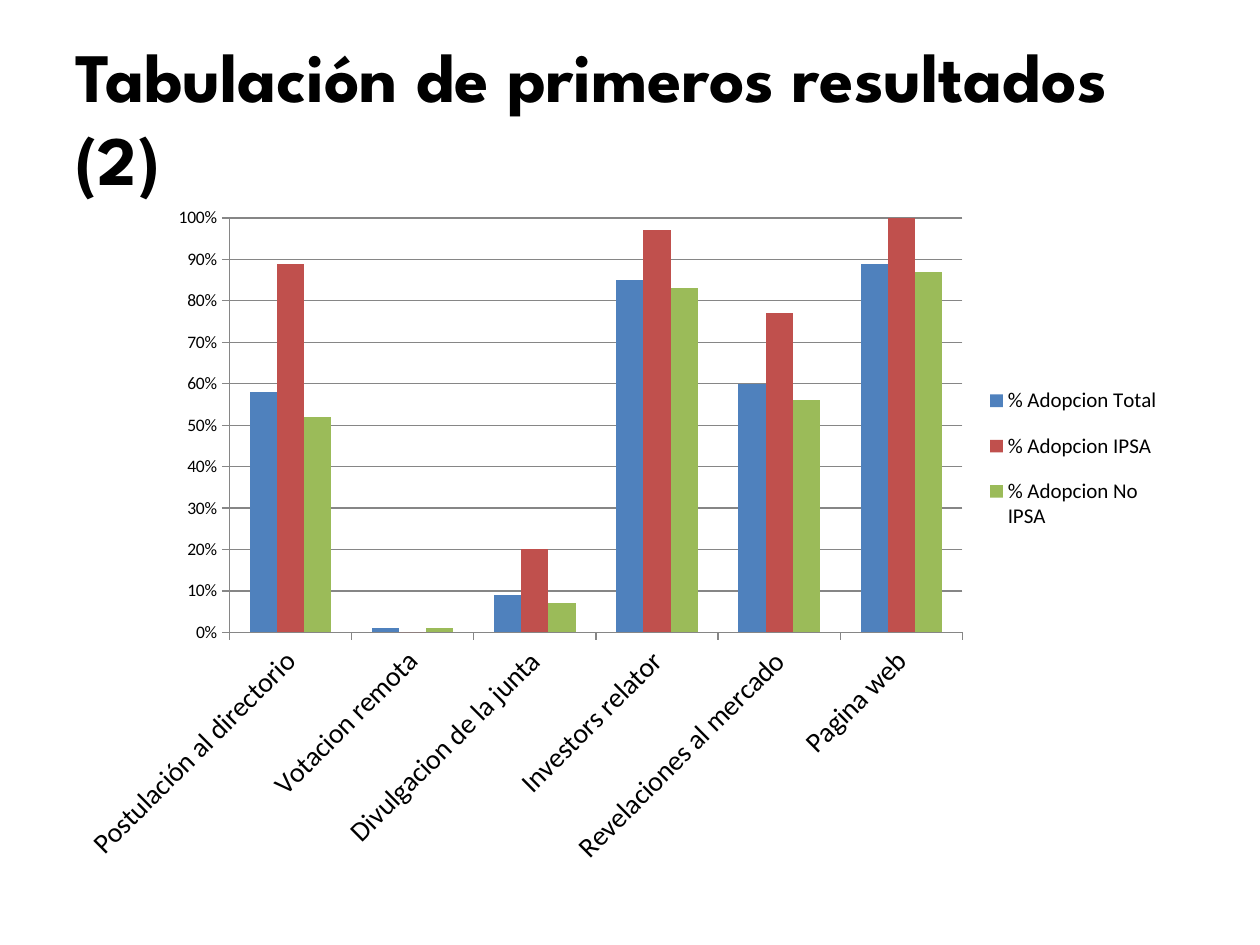
from typing import NamedTuple

from lxml.etree import SubElement
from pptx import Presentation
from pptx.chart.data import CategoryChartData
from pptx.dml.color import RGBColor
from pptx.enum.chart import XL_CHART_TYPE as ChartType
from pptx.enum.chart import XL_LEGEND_POSITION as LegendPos
from pptx.enum.chart import XL_TICK_MARK as Tick
from pptx.enum.text import MSO_ANCHOR as Anchor
from pptx.oxml.ns import qn
from pptx.util import Inches, Pt

BLACK = RGBColor(0x00, 0x00, 0x00)
GRAY = RGBColor(0x86, 0x86, 0x86)
BLUE = RGBColor(0x4F, 0x81, 0xBD)
RED = RGBColor(0xC0, 0x50, 0x4D)
GREEN = RGBColor(0x9B, 0xBB, 0x59)


class Box(NamedTuple):
    left: int
    top: int
    width: int
    height: int


class Adoption(NamedTuple):
    name: str
    values: tuple[float, ...]
    color: RGBColor


TITLE_BOX = Box(Inches(0.5), Inches(0.3), Inches(9), Inches(1.25))
CHART_BOX = Box(Inches(0.51), Inches(1.55), Inches(8.82), Inches(5.43))
PLOT_BOX = Box(Inches(1.82), Inches(1.73), Inches(5.82), Inches(3.29))
LEGEND_BOX = Box(Inches(7.78), Inches(2.92), Inches(1.48), Inches(1.44))
PRACTICES = (
    "Postulación al directorio",
    "Votacion remota",
    "Divulgacion de la junta",
    "Investors relator",
    "Revelaciones al mercado",
    "Pagina web",
)
ADOPTIONS = (
    Adoption("% Adopcion Total", (0.58, 0.01, 0.09, 0.85, 0.6, 0.89), BLUE),
    Adoption("% Adopcion IPSA", (0.89, 0, 0.2, 0.97, 0.77, 1), RED),
    Adoption("% Adopcion No IPSA", (0.52, 0.01, 0.07, 0.83, 0.56, 0.87), GREEN),
)
TITLE_FONT = {"name": "League Spartan", "size": Pt(39.6), "bold": True}
CHART_FONT = {"name": "Calibri", "size": Pt(10)}
CATEGORY_FONT = {**CHART_FONT, "size": Pt(16)}
LEGEND_FONT = {**CHART_FONT, "size": Pt(12)}


def set_font(font, formats: dict) -> None:
    for name, value in formats.items():
        setattr(font, name, value)
    font.color.rgb = BLACK


def add_title(s, text: str) -> None:
    sp = s.shapes.add_textbox(*TITLE_BOX)
    tf = sp.text_frame
    tf.word_wrap = True
    tf.vertical_anchor = Anchor.MIDDLE
    r = tf.paragraphs[0].add_run()
    r.text = text
    set_font(r.font, TITLE_FONT)


def place_in_chart(part, box: Box, inner: bool = False) -> None:
    for old in part.findall(qn("c:layout")):
        part.remove(old)
    layout = SubElement(part, qn("c:layout"))
    if part.tag == qn("c:legend"):
        part.find(qn("c:legendPos")).addnext(layout)
    else:
        part.insert(0, layout)
    manual = SubElement(layout, qn("c:manualLayout"))
    settings = {"layoutTarget": "inner"} if inner else {}
    settings |= {
        "xMode": "edge",
        "yMode": "edge",
        "x": (box.left - CHART_BOX.left) / CHART_BOX.width,
        "y": (box.top - CHART_BOX.top) / CHART_BOX.height,
        "w": box.width / CHART_BOX.width,
        "h": box.height / CHART_BOX.height,
    }
    for name, value in settings.items():
        SubElement(manual, qn(f"c:{name}")).set("val", str(value))


def style_axes(chart) -> None:
    value_axis, category_axis = chart.value_axis, chart.category_axis
    for axis, formats in ((value_axis, CHART_FONT), (category_axis, CATEGORY_FONT)):
        axis.major_tick_mark = Tick.OUTSIDE
        axis.minor_tick_mark = Tick.NONE
        axis.format.line.color.rgb = GRAY
        set_font(axis.tick_labels.font, formats)
    value_axis.minimum_scale = 0
    value_axis.maximum_scale = 1
    value_axis.major_unit = 0.1
    value_axis.has_major_gridlines = True
    value_axis.major_gridlines.format.line.color.rgb = GRAY
    value_axis.tick_labels.number_format = "0%"
    value_axis.tick_labels.number_format_is_linked = False
    for body in chart.element.xpath(".//c:catAx/c:txPr/a:bodyPr"):
        body.set("rot", "-2700000")


def add_adoption_chart(s, adoptions: tuple[Adoption, ...]) -> None:
    data = CategoryChartData(number_format="0%")
    data.categories = PRACTICES
    for adoption in adoptions:
        data.add_series(adoption.name, adoption.values)
    chart = s.shapes.add_chart(ChartType.COLUMN_CLUSTERED, *CHART_BOX, data).chart
    chart.has_title = False
    set_font(chart.font, CHART_FONT)
    style_axes(chart)
    plot = chart.plots[0]
    plot.vary_by_categories = False
    plot.gap_width = 150
    plot.overlap = 0
    for series, adoption in zip(plot.series, adoptions):
        series.format.fill.solid()
        series.format.fill.fore_color.rgb = adoption.color
    chart.has_legend = True
    chart.legend.position = LegendPos.RIGHT
    chart.legend.include_in_layout = False
    set_font(chart.legend.font, LEGEND_FONT)
    place_in_chart(chart.element.find(".//" + qn("c:plotArea")), PLOT_BOX, inner=True)
    place_in_chart(chart.element.find(".//" + qn("c:legend")), LEGEND_BOX)


def main() -> None:
    """Build the slide with the adoption rates of each practice."""
    prs = Presentation()
    prs.slide_width, prs.slide_height = Inches(10), Inches(7.5)
    s = prs.slides.add_slide(prs.slide_layouts[6])
    add_title(s, "Tabulación de primeros resultados (2)")
    add_adoption_chart(s, ADOPTIONS)
    prs.save("out.pptx")


if __name__ == "__main__":
    main()
